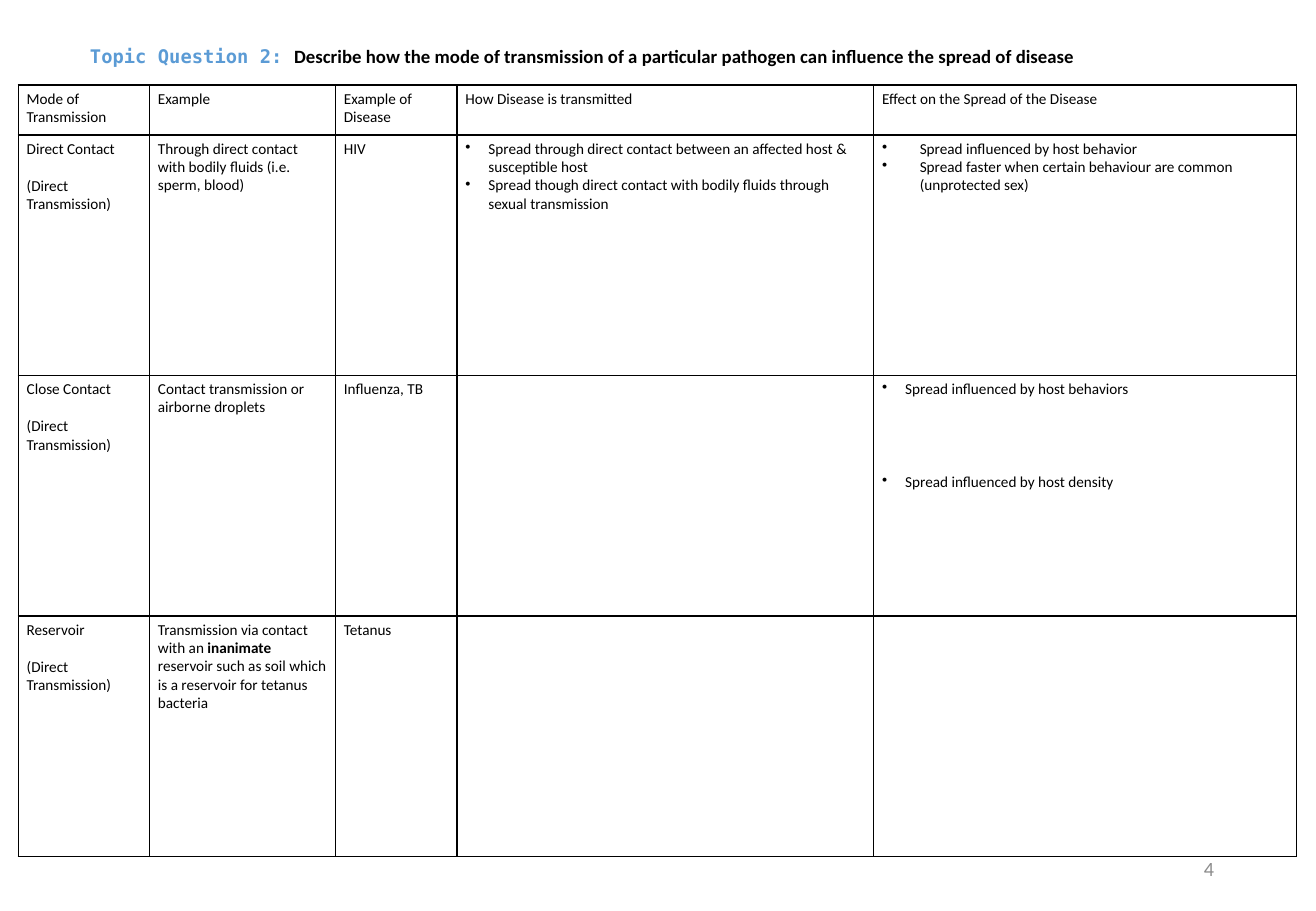
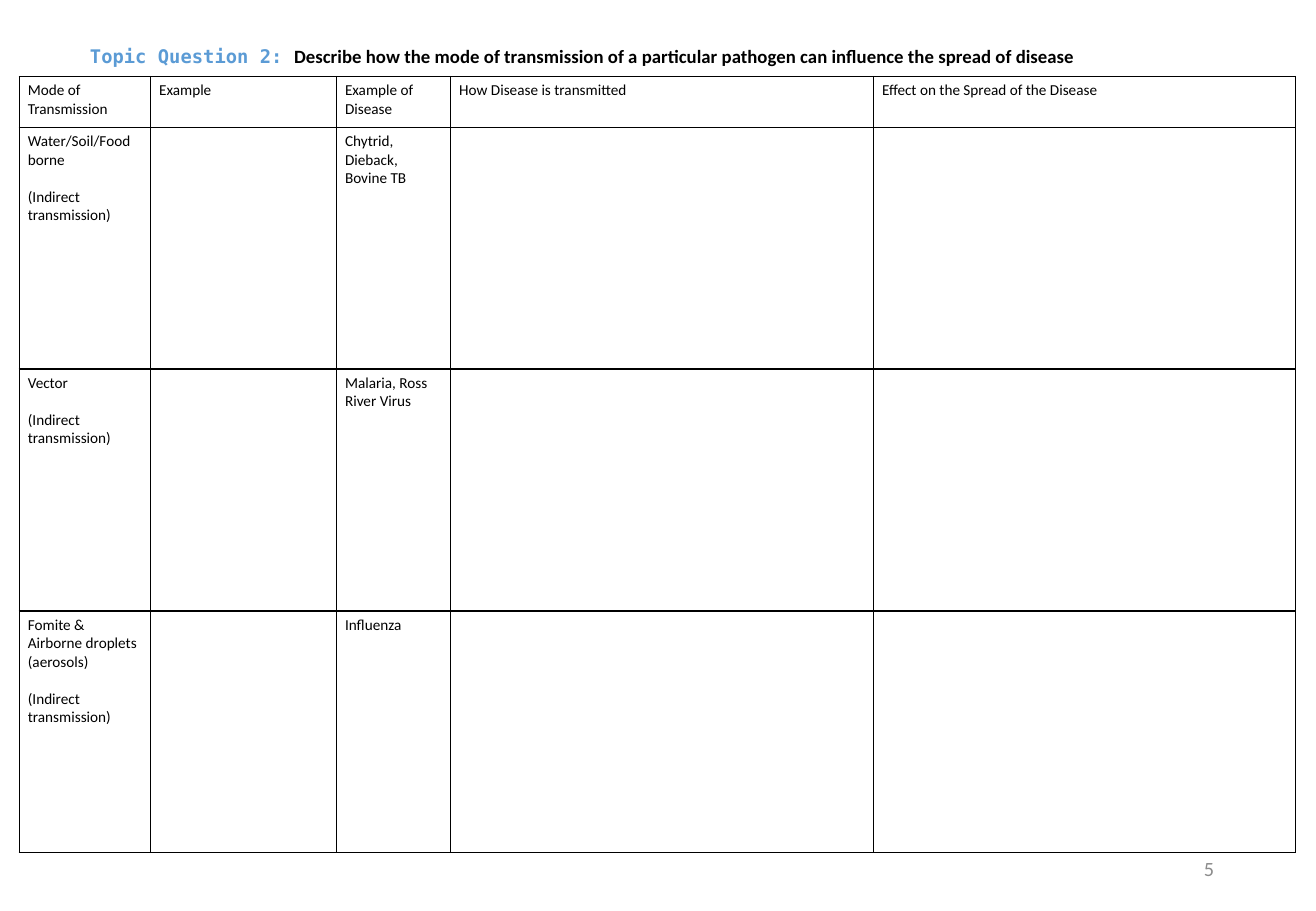
import dataclasses

import pptx
import pptx.dml.color
import pptx.enum.text
import pptx.oxml
import pptx.oxml.ns
import pptx.util
from pptx.util import Inches, Pt

RGB = pptx.dml.color.RGBColor
ALIGN = pptx.enum.text.PP_ALIGN
ANCHOR = pptx.enum.text.MSO_ANCHOR


@dataclasses.dataclass(frozen=True)
class Theme:
    ink: RGB = RGB(0x00, 0x00, 0x00)
    accent: RGB = RGB(0x5B, 0x9B, 0xD5)
    muted: RGB = RGB(0x8C, 0x8C, 0x8C)
    body_font: str = "Calibri"
    label_font: str = "DejaVu Sans Mono"
    title_size: float = 11.1
    cell_size: float = 9
    number_size: float = 12
    border: float = 1
    line_gap: float = 11


@dataclasses.dataclass(frozen=True)
class Para:
    text: str
    gap_lines: int = 0
    indent: float = 0
    bold: str = ""


THEME = Theme()
TITLE_BOX = (0.65, 0.21, 9.32, 0.69)
NUMBER_BOX = (7.65, 6.95, 2.44, 0.4)
LABEL = "Topic Question 2: "
QUESTION = ("Describe how the mode of transmission of a particular pathogen "
            "can influence the spread of disease")
HEADER = ["Mode of Transmission", "Example", "Example of Disease",
          "How Disease is transmitted", "Effect on the Spread of the Disease"]


def mode(name, kind):
    return [Para(name), Para(f"({kind})", gap_lines=1)]


def bullets(indent, *texts, gap_lines=0):
    return [Para(t, gap_lines if i else 0, indent) for i, t in enumerate(texts)]


DIRECT = "Direct Transmission"
INDIRECT = "Indirect transmission"

DIRECT_ROWS = [
    [mode("Direct Contact", DIRECT),
     "Through direct contact with bodily fluids (i.e. sperm, blood)",
     "HIV",
     bullets(0.19,
             "Spread through direct contact between an affected host & susceptible host",
             "Spread though direct contact with bodily fluids through sexual transmission"),
     bullets(0.31,
             "Spread influenced by host behavior",
             "Spread faster when certain behaviour are common (unprotected sex)")],
    [mode("Close Contact", DIRECT),
     "Contact transmission or airborne droplets",
     "Influenza, TB",
     "",
     bullets(0.19,
             "Spread influenced by host behaviors",
             "Spread influenced by host density", gap_lines=4)],
    [mode("Reservoir", DIRECT),
     [Para("Transmission via contact with an inanimate reservoir such as soil "
           "which is a reservoir for tetanus bacteria", bold="inanimate")],
     "Tetanus", "", ""],
]

INDIRECT_ROWS = [
    [mode("Water/Soil/Food borne", INDIRECT), "", "Chytrid, Dieback, Bovine TB", "", ""],
    [mode("Vector", INDIRECT), "", "Malaria, Ross River Virus", "", ""],
    [mode("Fomite & Airborne droplets (aerosols)", INDIRECT), "", "Influenza", "", ""],
]


def set_font(font, name, size, color, bold=None):
    font.name, font.size, font.bold = name, Pt(size), bold
    font.color.rgb = color


def add_title(s, box):
    title = s.shapes.title
    title.left, title.top, title.width, title.height = map(Inches, box)
    tf = title.text_frame
    tf.auto_size = pptx.enum.text.MSO_AUTO_SIZE.NONE
    tf.vertical_anchor = ANCHOR.TOP
    tf.margin_left = tf.margin_right = Inches(0.09)
    tf.margin_top, tf.margin_bottom = Inches(0.16), Inches(0.05)
    p = tf.paragraphs[0]
    p.alignment = ALIGN.LEFT
    for text, name, color in ((LABEL, THEME.label_font, THEME.accent),
                              (QUESTION, THEME.body_font, THEME.ink)):
        r = p.add_run()
        r.text = text
        set_font(r.font, name, THEME.title_size, color, True)


def add_number(s, box, number):
    tf = s.shapes.add_textbox(*map(Inches, box)).text_frame
    tf.word_wrap = True
    tf.vertical_anchor = ANCHOR.MIDDLE
    p = tf.paragraphs[0]
    p.text = str(number)
    p.alignment = ALIGN.RIGHT
    set_font(p.font, THEME.body_font, THEME.number_size, THEME.muted)


def add_bullet(p, indent):
    pPr = p._p.get_or_add_pPr()
    pPr.set("marL", str(Inches(indent)))
    pPr.set("indent", str(-Inches(indent)))
    ns = pptx.oxml.ns.nsdecls("a")
    bullet = pptx.oxml.parse_xml(f'<a:buChar {ns} char="•"/>')
    pPr.insert_element_before(bullet, "a:tabLst", "a:defRPr", "a:extLst")


def fill_paragraph(p, para):
    before, bold, after = para.text.partition(para.bold) if para.bold else (para.text, "", "")
    for text in filter(None, (before, bold, after)):
        r = p.add_run()
        r.text = text
        if text == bold:
            r.font.bold = True
    set_font(p.font, THEME.body_font, THEME.cell_size, THEME.ink)
    if para.gap_lines:
        p.space_before = Pt(para.gap_lines * THEME.line_gap)
    if para.indent:
        add_bullet(p, para.indent)


def add_borders(cell):
    tcPr = cell._tc.get_or_add_tcPr()
    ns = pptx.oxml.ns.nsdecls("a")
    for side in "LRTB":
        tcPr.append(pptx.oxml.parse_xml(
            f'<a:ln{side} {ns} w="{Pt(THEME.border)}"><a:solidFill>'
            f'<a:srgbClr val="{THEME.ink}"/></a:solidFill></a:ln{side}>'))


def fill_cell(cell, content):
    add_borders(cell)
    cell.fill.background()
    cell.margin_left = cell.margin_right = Inches(0.07)
    cell.margin_top = cell.margin_bottom = Inches(0.04)
    tf = cell.text_frame
    paras = [Para(content)] if isinstance(content, str) else content
    for i, para in enumerate(paras):
        fill_paragraph(tf.add_paragraph() if i else tf.paragraphs[0], para)


def add_modes_table(s, left, top, widths, head_height, row_height, rows):
    heights = [head_height] + [row_height] * len(rows)
    box = (left, top, sum(widths), sum(heights))
    table = s.shapes.add_table(len(heights), len(widths), *map(Inches, box)).table
    table.first_row = table.horz_banding = False
    for column, width in zip(table.columns, widths):
        column.width = Inches(width)
    for row, height, contents in zip(table.rows, heights, [HEADER] + rows):
        row.height = Inches(height)
        for cell, content in zip(row.cells, contents):
            fill_cell(cell, content)


def add_topic_slide(prs, number, *table):
    s = prs.slides.add_slide(prs.slide_layouts.get_by_name("Title Only"))
    add_title(s, TITLE_BOX)
    add_modes_table(s, *table)
    add_number(s, NUMBER_BOX, number)


def main():
    prs = pptx.Presentation()
    prs.slide_width, prs.slide_height = Inches(10.83), Inches(7.5)
    add_topic_slide(prs, 4, 0.15, 0.7, [1.08, 1.53, 1, 3.43, 3.48], 0.41, 1.98, DIRECT_ROWS)
    add_topic_slide(prs, 5, 0.16, 0.63, [1.08, 1.53, 0.94, 3.48, 3.47], 0.42, 1.99, INDIRECT_ROWS)
    prs.save("out.pptx")


if __name__ == "__main__":
    main()
